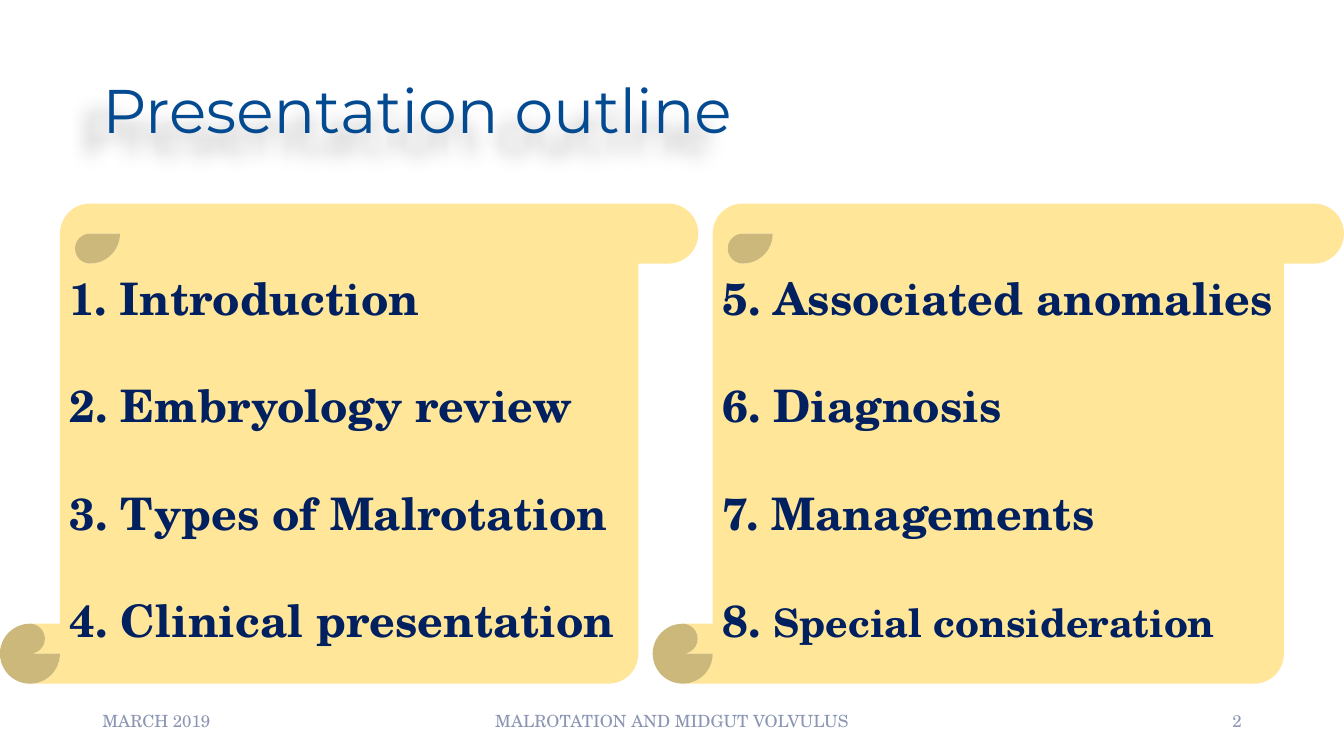
"""Build the presentation outline slide with two scroll panels."""
from lxml import etree
from pptx import Presentation
from pptx import util as u
from pptx.dml.color import RGBColor
from pptx.enum import shapes, text
from pptx.oxml.ns import nsdecls

BLUE = RGBColor(0x03, 0x4A, 0x90)
NAVY = RGBColor(0x00, 0x20, 0x60)
GREY = RGBColor(0x8C, 0x96, 0xB4)
PARCHMENT = RGBColor(0xFF, 0xE6, 0x99)
SERIF = "TeX Gyre Schola"
LEFT, CENTER, RIGHT = text.PP_ALIGN.LEFT, text.PP_ALIGN.CENTER, text.PP_ALIGN.RIGHT


def add_run(p, content, size, color, font=SERIF, bold=False, align=LEFT):
    p.alignment = align
    r = p.add_run()
    r.text = content
    r.font.name = font
    r.font.size = u.Pt(size)
    r.font.bold = bold
    r.font.color.rgb = color


prs = Presentation()
prs.slide_width, prs.slide_height = u.Cm(33.87), u.Cm(19.05)
s = prs.slides.add_slide(prs.slide_layouts[6])

title = s.shapes.add_textbox(u.Cm(2.33), u.Cm(1.01), u.Cm(29.21), u.Cm(3.68))
tf = title.text_frame
tf.word_wrap = True
tf.vertical_anchor = text.MSO_ANCHOR.MIDDLE
tf.paragraphs[0].line_spacing = 0.9
add_run(tf.paragraphs[0], "Presentation outline", 44, BLUE, font="Montserrat")
title._element.spPr.append(etree.fromstring(
    f'<a:effectLst {nsdecls("a")}>'
    '<a:outerShdw blurRad="152400" dist="270000" dir="8100000" algn="tr" rotWithShape="0">'
    '<a:srgbClr val="000000"><a:alpha val="30000"/></a:srgbClr>'
    '</a:outerShdw></a:effectLst>'))

footers = [
    (2.33, 7.62, "MARCH 2019", LEFT),
    (11.22, 11.43, "MALROTATION AND MIDGUT VOLVULUS", CENTER),
    (23.92, 7.62, "2", RIGHT),
]
for left, width, label, align in footers:
    sp = s.shapes.add_textbox(u.Cm(left), u.Cm(17.66), u.Cm(width), u.Cm(1.01))
    tf = sp.text_frame
    tf.word_wrap = True
    tf.vertical_anchor = text.MSO_ANCHOR.MIDDLE
    add_run(tf.paragraphs[0], label, 12, GREY, align=align)

scrolls = [
    (0, 17.6, [
        [("1. Introduction", 32)],
        [("2. Embryology review", 32)],
        [("3. Types of Malrotation", 32)],
        [("4. Clinical presentation", 32)],
    ]),
    (16.45, 17.42, [
        [("5. Associated anomalies", 32)],
        [("6. Diagnosis", 32)],
        [("7. Managements", 32)],
        [("8. ", 32), ("Special consideration", 28)],
    ]),
]
for left, width, topics in scrolls:
    sp = s.shapes.add_shape(shapes.MSO_SHAPE.VERTICAL_SCROLL,
                            u.Cm(left), u.Cm(5.13), u.Cm(width), u.Cm(12.1))
    sp.shadow.inherit = False
    sp.fill.solid()
    sp.fill.fore_color.rgb = PARCHMENT
    sp.line.fill.background()
    tf = sp.text_frame
    tf.word_wrap = True
    tf.vertical_anchor = text.MSO_ANCHOR.MIDDLE
    for i, topic in enumerate(topics):
        p = tf.add_paragraph() if i else tf.paragraphs[0]
        if i:
            p.space_before = u.Pt(38.4)
        for content, size in topic:
            add_run(p, content, size, NAVY, bold=True)

prs.save("out.pptx")
